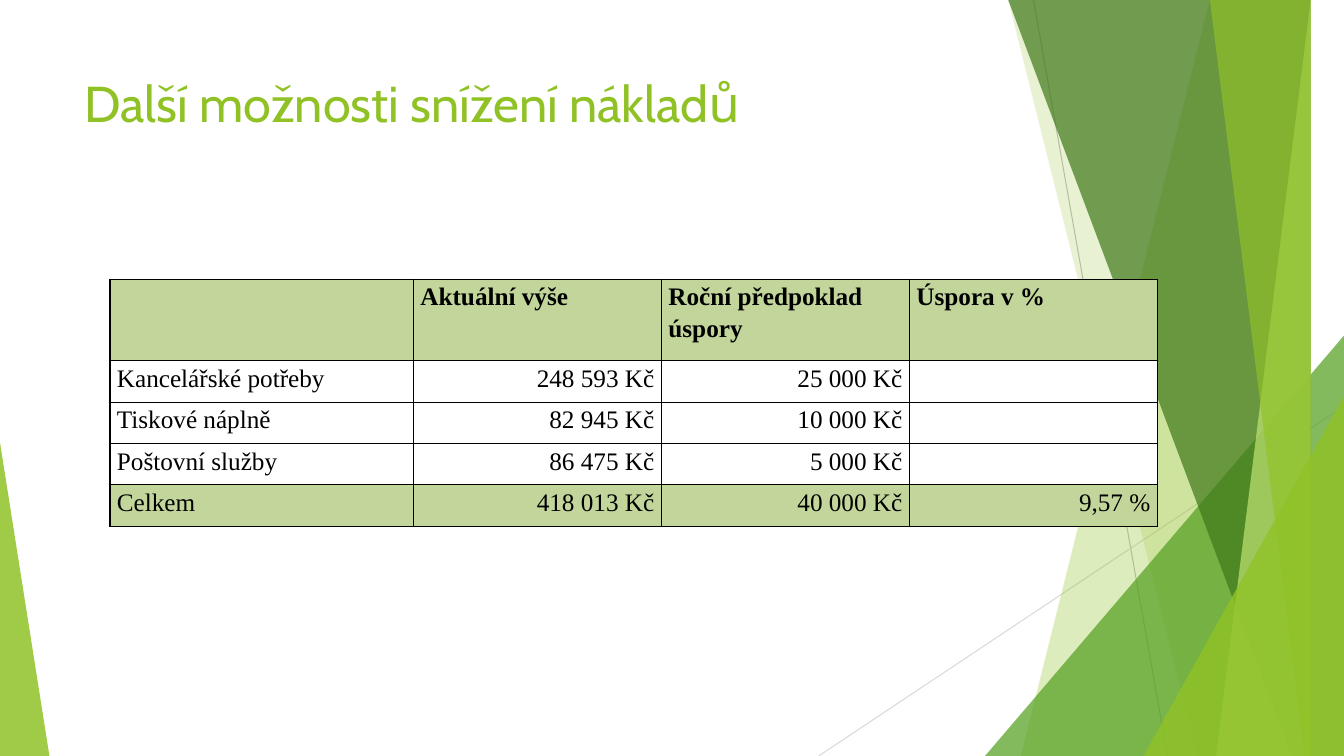
from lxml import etree
from pptx import Presentation
from pptx.dml.color import RGBColor
from pptx.enum.shapes import MSO_CONNECTOR as Connector, MSO_SHAPE as Shape
from pptx.enum.text import MSO_ANCHOR as Anchor, PP_ALIGN as Align
from pptx.oxml.ns import qn
from pptx.util import Inches, Pt

LIME = RGBColor(0x90, 0xC2, 0x26)
LEAF = RGBColor(0x54, 0xA0, 0x21)
FOREST = RGBColor(0x3F, 0x78, 0x19)
PALE = RGBColor(0xC0, 0xE4, 0x74)
SAGE = RGBColor(0xC2, 0xD6, 0x9B)
WHITE = RGBColor(0xFF, 0xFF, 0xFF)
BLACK = RGBColor(0, 0, 0)
GREY = RGBColor(0xBF, 0xBF, 0xBF)
LIGHT_GREY = RGBColor(0xD9, 0xD9, 0xD9)

# Content
TITLE = "Další možnosti snížení nákladů"
COSTS = [
    ("", "Aktuální výše", "Roční předpoklad úspory", "Úspora v %"),
    ("Kancelářské potřeby", "248 593 Kč", "25 000 Kč", ""),
    ("Tiskové náplně", "82 945 Kč", "10 000 Kč", ""),
    ("Poštovní služby", "86 475 Kč", "5 000 Kč", ""),
    ("Celkem", "418 013 Kč", "40 000 Kč", "9,57 %"),
]
COLUMN_WIDTHS = (3.01, 2.46, 2.46, 2.46)
ROW_HEIGHTS = (0.81, 0.41, 0.41, 0.41, 0.41)

# Decoration, from back to front
WIDTH, HEIGHT, TOP = 13.33, 7.5, -0.01
RAYS = [  # start, end, colour
    ((10.25, 0), (11.58, HEIGHT), GREY),
    ((WIDTH, 4.03), (8.12, HEIGHT), LIGHT_GREY),
]
BANDS = "band"
WEDGES = "wedge"
FACETS = [  # band: top x, bottom x; wedge: left, top, width, apex position
    (BANDS, (12.28, 10.04), LIME, 30),
    (BANDS, (10.5, 11.83), LIME, 20),
    (WEDGES, (9.77, 3.33, 3.56, 1), LEAF, 72),
    (BANDS, (10.21, 12.91), FOREST, 70),
    (BANDS, (13.03, 11.92), PALE, 70),
    (BANDS, (11.96, 13.18), LIME, 65),
    (WEDGES, (11.34, 3.93, 1.99, 1), LIME, 80),
    (WEDGES, (0, 4.39, 0.49, 0), LIME, 85),
]

deck = Presentation()
deck.slide_width, deck.slide_height = Inches(WIDTH), Inches(HEIGHT)
page = deck.slides.add_slide(deck.slide_layouts[6])


def add_ray(start, end, color):
    ray = page.shapes.add_connector(
        Connector.STRAIGHT, *(Inches(v) for v in start + end))
    ray.line.color.rgb = color
    ray.line.width = Pt(0.75)
    etree.SubElement(ray._element.spPr, qn("a:effectLst"))


def add_band(top_x, bottom_x):
    """Quadrilateral that reaches the right edge of the slide."""
    builder = page.shapes.build_freeform(top_x, TOP, scale=Inches(1))
    builder.add_line_segments(
        [(WIDTH, TOP), (WIDTH, HEIGHT), (bottom_x, HEIGHT)], close=True)
    return builder.convert_to_shape()


def add_wedge(left, top, width, apex):
    """Triangle that stands on the bottom edge of the slide."""
    wedge = page.shapes.add_shape(
        Shape.ISOSCELES_TRIANGLE, Inches(left), Inches(top),
        Inches(width), Inches(HEIGHT - top))
    wedge.adjustments[0] = apex
    return wedge


def paint(facet, color, opacity):
    facet.shadow.inherit = False
    facet.line.fill.background()
    facet.fill.solid()
    facet.fill.fore_color.rgb = color
    swatch = facet._element.spPr.find(".//" + qn("a:srgbClr"))
    etree.SubElement(swatch, qn("a:alpha"), val=str(opacity * 1000))


def add_borders(cell):
    properties = cell._tc.get_or_add_tcPr()
    for index, side in enumerate(("lnL", "lnR", "lnT", "lnB")):
        border = etree.Element(qn("a:" + side), w=str(Pt(1)))
        fill = etree.SubElement(border, qn("a:solidFill"))
        etree.SubElement(fill, qn("a:srgbClr"), val=str(BLACK))
        properties.insert(index, border)


def style(para, font_name, size, color, bold=False):
    para.font.size = Pt(size)
    for span in para.runs:
        span.font.name = font_name
        span.font.size = Pt(size)
        span.font.color.rgb = color
        span.font.bold = bold


for ray in RAYS:
    add_ray(*ray)
for kind, geometry, color, opacity in FACETS:
    add_facet = add_band if kind == BANDS else add_wedge
    paint(add_facet(*geometry), color, opacity)

# Title
box = page.shapes.add_textbox(
    Inches(0.74), Inches(0.67), Inches(9.4), Inches(1.44))
box.text_frame.word_wrap = True
box.text_frame.vertical_anchor = Anchor.TOP
box.text_frame.text = TITLE
style(box.text_frame.paragraphs[0], "Cabin", 36, LIME)

# Cost table
table = page.shapes.add_table(
    len(COSTS), len(COLUMN_WIDTHS), Inches(1.09), Inches(2.77),
    Inches(sum(COLUMN_WIDTHS)), Inches(sum(ROW_HEIGHTS))).table
for column, width in zip(table.columns, COLUMN_WIDTHS):
    column.width = Inches(width)
for row, height in zip(table.rows, ROW_HEIGHTS):
    row.height = Inches(height)

for r, entries in enumerate(COSTS):
    header = r == 0
    shaded = header or r == len(COSTS) - 1
    for c, entry in enumerate(entries):
        cell = table.cell(r, c)
        cell.margin_left = cell.margin_right = Inches(0.07)
        cell.margin_top = cell.margin_bottom = 0
        cell.fill.solid()
        cell.fill.fore_color.rgb = SAGE if shaded else WHITE
        add_borders(cell)
        cell.text_frame.text = entry
        para = cell.text_frame.paragraphs[0]
        para.line_spacing = 1.15
        para.alignment = Align.LEFT if header or c == 0 else Align.RIGHT
        style(para, "Times New Roman", 18, BLACK, bold=header)

deck.save("out.pptx")
